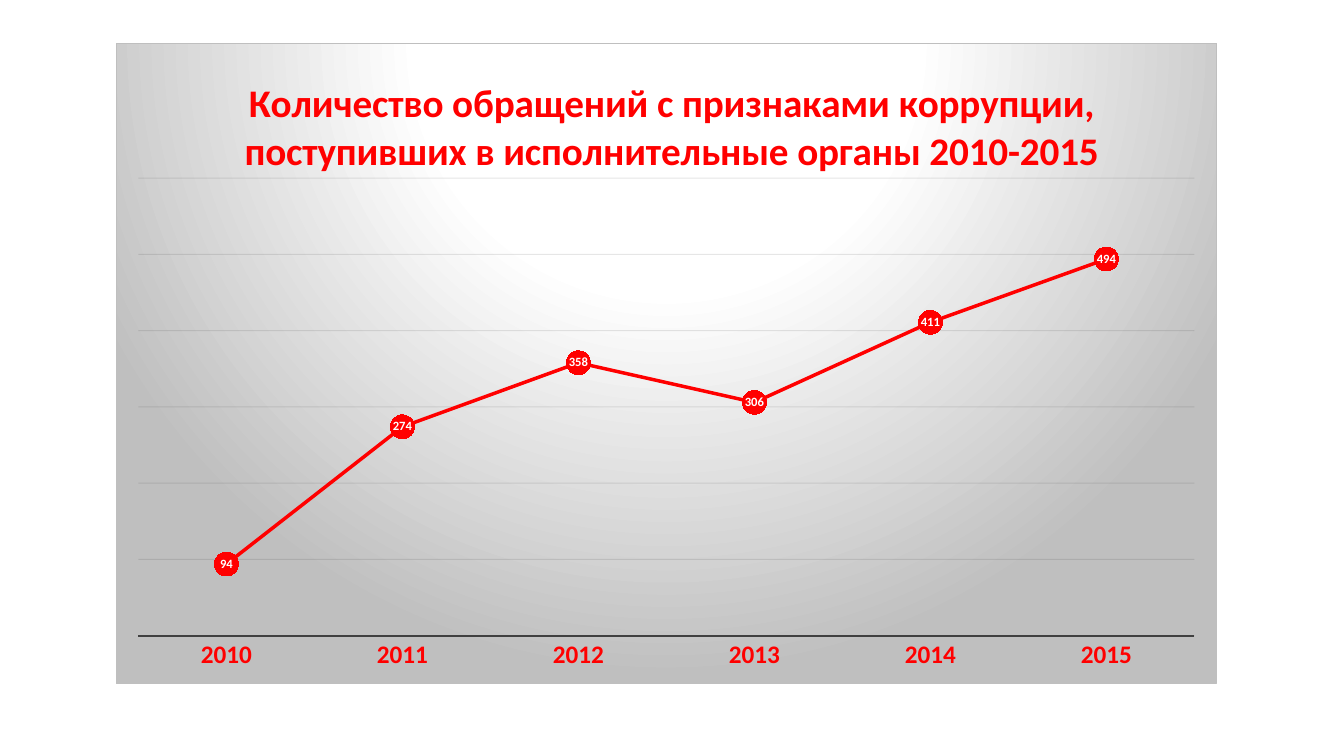
from dataclasses import dataclass

from lxml import etree
from pptx import Presentation
from pptx import util as u
from pptx.chart.data import CategoryChartData
from pptx.dml.color import RGBColor
from pptx.enum import chart as ce
from pptx.oxml import parse_xml
from pptx.oxml.ns import nsdecls, qn


@dataclass(frozen=True)
class Theme:
    font: str = "Calibri"
    accent: str = "FF0000"
    white: str = "FFFFFF"
    edge: str = "BFBFBF"
    axis: str = "404040"
    grid: str = "0D0D0D"
    base: str = "000000"
    base_size: int = 10
    title_size: int = 28
    axis_size: int = 18
    label_size: int = 9


THEME = Theme()
TITLE = ("Количество обращений с признаками коррупции, "
         "поступивших в исполнительные органы 2010-2015")
APPEALS = {"2010": 94, "2011": 274, "2012": 358,
           "2013": 306, "2014": 411, "2015": 494}


def format_font(font, size, color, bold=False):
    font.name = THEME.font
    font.size = u.Pt(size)
    font.bold = bold
    font.color.rgb = RGBColor.from_string(color)


def add_text(tf, text, **style):
    tf.text = text
    format_font(tf.paragraphs[0].runs[0].font, **style)


def format_line(line, color, width):
    line.color.rgb = RGBColor.from_string(color)
    line.width = u.Pt(width)


def set_layout(element, index, inner=False, **fractions):
    """Place a chart part by fractions of the chart's size."""
    for old in element.findall(qn("c:layout")):
        element.remove(old)
    values = {"xMode": "edge", "yMode": "edge", **fractions}
    if inner:
        values = {"layoutTarget": "inner", **values}
    items = "".join(f'<c:{k} val="{v}"/>' for k, v in values.items())
    element.insert(index, parse_xml(
        f'<c:layout {nsdecls("c")}><c:manualLayout>{items}'
        '</c:manualLayout></c:layout>'))


def set_background(chart):
    """Give the chart area a radial gradient and a thin border."""
    stops = "".join(
        f'<a:gs pos="{pos * 1000}"><a:srgbClr val="{color}"/></a:gs>'
        for pos, color in ((0, THEME.white), (39, THEME.white), (100, THEME.edge)))
    chart.element.find(qn("c:chart")).addnext(parse_xml(
        f'<c:spPr {nsdecls("c", "a")}><a:gradFill><a:gsLst>{stops}</a:gsLst>'
        '<a:path path="circle"><a:fillToRect l="50000" t="-80000" r="50000" '
        'b="180000"/></a:path></a:gradFill><a:ln w="9525"><a:solidFill>'
        f'<a:srgbClr val="{THEME.edge}"/></a:solidFill></a:ln></c:spPr>'))


def format_axes(chart):
    cat = chart.category_axis
    cat.major_tick_mark = ce.XL_TICK_MARK.NONE
    format_line(cat.format.line, THEME.axis, 1.5)
    format_font(cat.tick_labels.font, THEME.axis_size, THEME.accent, bold=True)

    val = chart.value_axis
    val.visible = False
    val.minimum_scale, val.maximum_scale, val.major_unit = 0, 600, 100
    val.has_major_gridlines = True
    grid = val.major_gridlines
    format_line(grid.format.line, THEME.grid, 0.75)
    for color in grid.format.line._get_or_add_ln().iter(qn("a:srgbClr")):
        etree.SubElement(color, qn("a:alpha")).set("val", "10000")


def format_series(series):
    series.smooth = False
    format_line(series.format.line, THEME.accent, 2.5)
    marker = series.marker
    marker.style = ce.XL_MARKER_STYLE.CIRCLE
    marker.size = 17
    marker.format.fill.solid()
    marker.format.fill.fore_color.rgb = RGBColor.from_string(THEME.accent)
    marker.format.line.fill.background()
    labels = series.data_labels
    labels.show_value = True
    labels.position = ce.XL_LABEL_POSITION.CENTER
    format_font(labels.font, THEME.label_size, THEME.white, bold=True)


def add_line_chart(slide, title, values, left, top, width, height):
    data = CategoryChartData()
    data.categories = list(values)
    data.add_series("Series 1", list(values.values()))
    chart = slide.shapes.add_chart(
        ce.XL_CHART_TYPE.LINE_MARKERS, left, top, width, height, data).chart
    chart.has_legend = False
    set_background(chart)
    format_font(chart.font, THEME.base_size, THEME.base)
    chart.has_title = True
    add_text(chart.chart_title.text_frame, title,
             size=THEME.title_size, color=THEME.accent, bold=True)
    set_layout(chart.chart_title.element, 1, x=0.11, y=0.04)
    set_layout(chart.element.find(".//" + qn("c:plotArea")), 0, inner=True,
               x=0.02, y=0.21, w=0.96, h=0.715)
    chart.plots[0].vary_by_categories = False
    format_axes(chart)
    format_series(chart.plots[0].series[0])


def main():
    prs = Presentation()
    prs.slide_width, prs.slide_height = u.Inches(13.33), u.Inches(7.5)
    slide = prs.slides.add_slide(prs.slide_layouts[6])
    add_line_chart(slide, TITLE, APPEALS, u.Inches(1.15), u.Inches(0.43),
                   u.Inches(10.92), u.Inches(6.36))
    prs.save("out.pptx")


if __name__ == "__main__":
    main()
